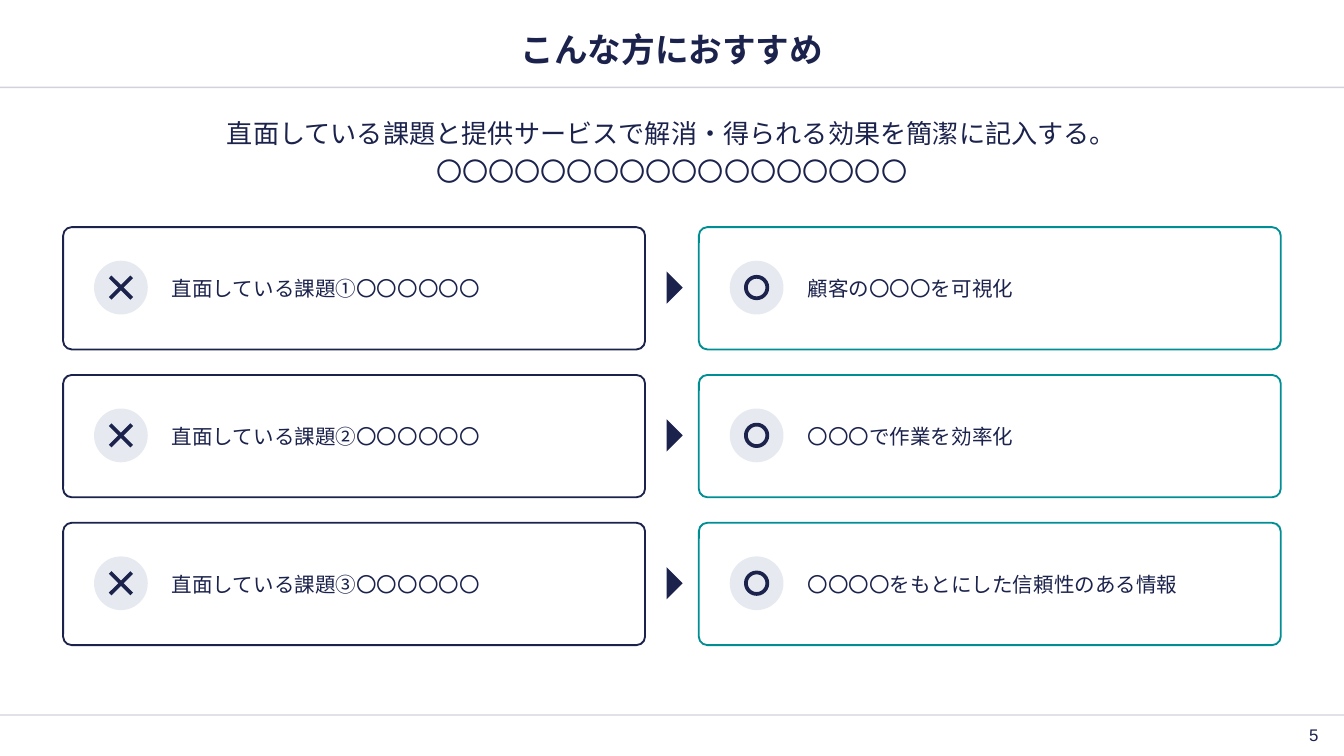
"""Build the recommendation slide: three customer problems and their solutions."""
import pptx
import pptx.dml.color
import pptx.enum.shapes
import pptx.enum.text
import pptx.oxml.ns
import pptx.util
from lxml import etree

Inches = pptx.util.Inches
Pt = pptx.util.Pt
RGBColor = pptx.dml.color.RGBColor
SHAPE = pptx.enum.shapes.MSO_SHAPE
STRAIGHT = pptx.enum.shapes.MSO_CONNECTOR.STRAIGHT
ALIGN = pptx.enum.text.PP_ALIGN
ANCHOR = pptx.enum.text.MSO_ANCHOR
qn = pptx.oxml.ns.qn

NAVY = RGBColor(0x1B, 0x22, 0x4C)
TEAL = RGBColor(0x00, 0x8E, 0x95)
PALE = RGBColor(0xE6, 0xEA, 0xF0)
WHITE = RGBColor(0xFF, 0xFF, 0xFF)
FONT = "Arial"

SLIDE_W = 10
SLIDE_H = SLIDE_W * 9 / 16
MARGIN = 0.47
CONTENT_W = SLIDE_W - 2 * MARGIN
GUTTER = 0.4
CARD_W, CARD_H = (CONTENT_W - GUTTER) / 2, 0.91
COL_PITCH = CARD_W + GUTTER
ROW_TOP, ROW_PITCH = 1.69, 1.1
ROW_MIDDLE = 0.45
BADGE, MARK = 0.4, 0.16
ARROW_W, ARROW_H = 0.24, 0.12

LEAD = [
    "直面している課題と提供サービスで解消・得られる効果を簡潔に記入する。",
    "〇〇〇〇〇〇〇〇〇〇〇〇〇〇〇〇〇〇",
]
ROWS = [
    ("直面している課題①〇〇〇〇〇〇", "顧客の〇〇〇を可視化"),
    ("直面している課題②〇〇〇〇〇〇", "〇〇〇で作業を効率化"),
    ("直面している課題③〇〇〇〇〇〇", "〇〇〇〇をもとにした信頼性のある情報"),
]


def write(tf, lines, size, align, anchor, insets, bold=False, after=None):
    """Fill a text frame with evenly styled paragraphs."""
    tf.word_wrap = True
    tf.vertical_anchor = anchor
    tf.margin_left, tf.margin_top, tf.margin_right, tf.margin_bottom = map(Inches, insets)
    for i, line in enumerate(lines):
        p = tf.paragraphs[0] if i == 0 else tf.add_paragraph()
        p.alignment = align
        p.space_after = after
        p.font.size = Pt(size)
        p.font.bold = bold
        p.font.name = FONT
        p.font.color.rgb = NAVY
        r = p.add_run()
        r.text = line
        etree.SubElement(r._r.get_or_add_rPr(), qn("a:ea"), typeface=FONT)


def add_text(shapes, box, lines, size, align, anchor=ANCHOR.MIDDLE, **style):
    """Add a text box with narrow insets."""
    sp = shapes.add_textbox(*map(Inches, box))
    write(sp.text_frame, lines, size, align, anchor, [0.04] * 4, **style)


def add_shape(shapes, kind, box, fill=None, line=None, width=1):
    """Add a flat preset shape with optional fill and outline."""
    sp = shapes.add_shape(kind, *map(Inches, box))
    sp.shadow.inherit = False
    if fill is None:
        sp.fill.background()
    else:
        sp.fill.solid()
        sp.fill.fore_color.rgb = fill
    if line is None:
        sp.line.fill.background()
    else:
        sp.line.color.rgb = line
        sp.line.width = Pt(width)
    return sp


def add_line(shapes, ends, width, opacity=None):
    """Add a straight navy line without a shadow."""
    line = shapes.add_connector(STRAIGHT, *map(Inches, ends))
    line.line.color.rgb = NAVY
    line.line.width = Pt(width)
    props = line._element.spPr
    if opacity is not None:
        color = next(props.iter(qn("a:srgbClr")))
        etree.SubElement(color, qn("a:alpha"), val=str(opacity * 1000))
    etree.SubElement(props, qn("a:effectLst"))


def add_badge(shapes, x, y, solved):
    """Add a pale disc centred on a point, marked with a ring or a cross."""
    badge = shapes.add_group_shape().shapes
    add_shape(badge, SHAPE.OVAL, (x - BADGE / 2, y - BADGE / 2, BADGE, BADGE), PALE)
    half = MARK / 2
    if solved:
        add_shape(badge, SHAPE.OVAL, (x - half, y - half, MARK, MARK), line=NAVY, width=2)
    else:
        for rise in (half, -half):
            add_line(badge, (x - half, y - rise, x + half, y + rise), 2)


def add_card(shapes, col, top, text):
    """Add a rounded card in the given column."""
    left = MARGIN + col * COL_PITCH
    sp = add_shape(shapes, SHAPE.ROUNDED_RECTANGLE, (left, top, CARD_W, CARD_H),
                   WHITE, (NAVY, TEAL)[col])
    sp.adjustments[0] = 0.07
    write(sp.text_frame, [text], 11, ALIGN.LEFT, ANCHOR.MIDDLE, (0.79, 0.08, 0.08, 0.08))


def add_arrow(shapes, x, y):
    """Add a right-pointing triangle centred on a point."""
    box = (x - ARROW_W / 2, y - ARROW_H / 2, ARROW_W, ARROW_H)
    add_shape(shapes, SHAPE.ISOSCELES_TRIANGLE, box, NAVY).rotation = 90


def main():
    """Compose and save the slide."""
    prs = pptx.Presentation()
    prs.slide_width, prs.slide_height = Inches(SLIDE_W), Inches(SLIDE_H)
    shapes = prs.slides.add_slide(prs.slide_layouts[6]).shapes

    for y in (0.65, 5.32):
        add_line(shapes, (0, y, SLIDE_W, y), 0.75, opacity=20)
    add_text(shapes, (MARGIN, 0.17, CONTENT_W, 0.39), ["こんな方におすすめ"], 18,
             ALIGN.CENTER, bold=True)
    add_text(shapes, (MARGIN, 0.83, CONTENT_W, 0.63), LEAD, 14, ALIGN.CENTER,
             ANCHOR.TOP, after=Pt(4))
    add_text(shapes, (9.46, 5.37, 0.39, 0.2), ["5"], 9, ALIGN.RIGHT)

    for row, texts in enumerate(ROWS):
        top = ROW_TOP + row * ROW_PITCH
        middle = top + ROW_MIDDLE
        for col, text in enumerate(texts):
            add_card(shapes, col, top, text)
        for col in range(len(texts)):
            add_badge(shapes, MARGIN + 0.43 + col * COL_PITCH, middle, solved=col == 1)
        add_arrow(shapes, SLIDE_W / 2 + 0.02, middle)

    prs.save("out.pptx")


if __name__ == "__main__":
    main()
